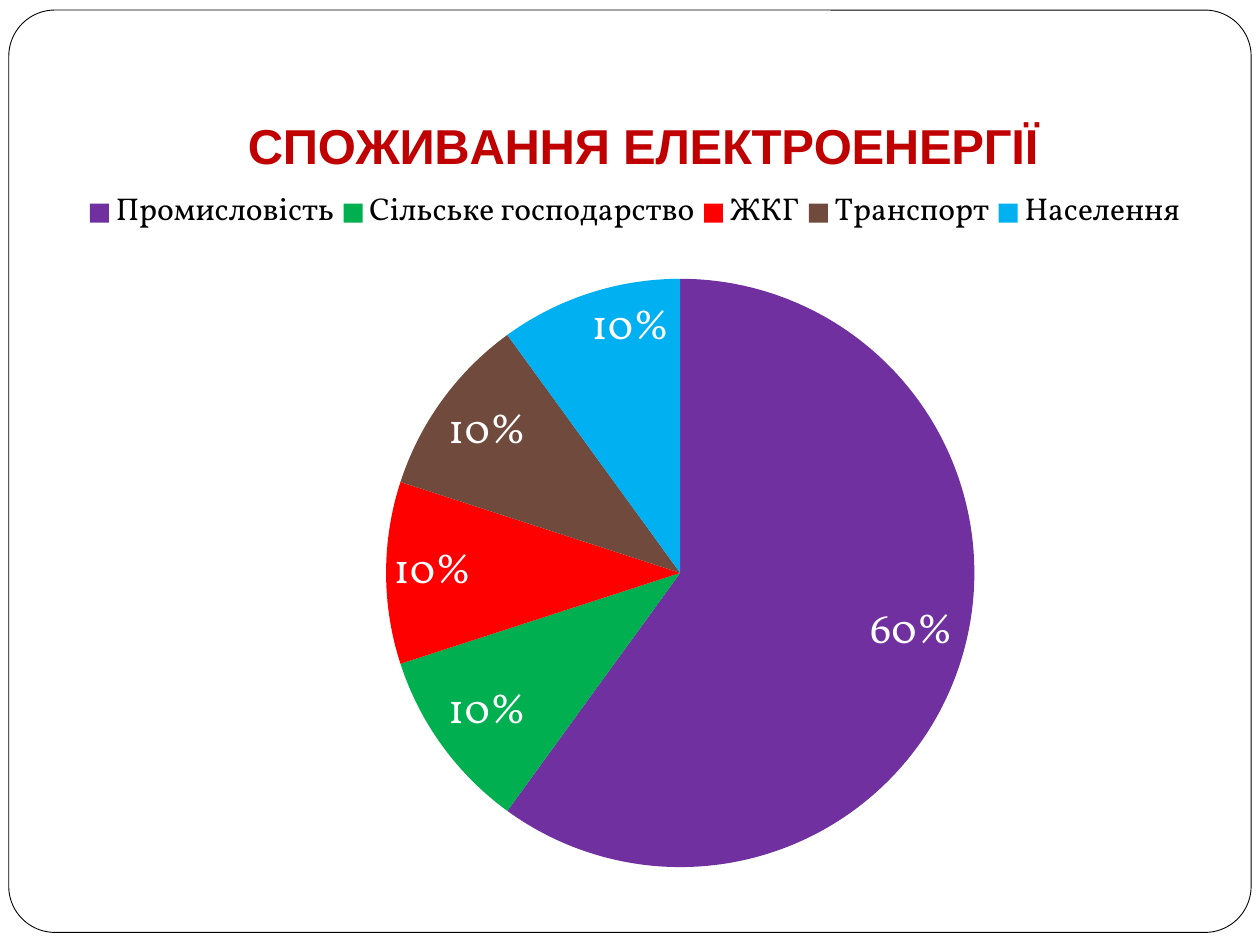
import lxml.etree
import pptx
import pptx.chart.data
import pptx.dml.color
import pptx.enum.chart
import pptx.enum.shapes
import pptx.oxml.ns
import pptx.util

Inches = pptx.util.Inches
Pt = pptx.util.Pt
rgb = pptx.dml.color.RGBColor.from_string
qn = pptx.oxml.ns.qn

THEME = {
    "paper": "FFFFFF",
    "edge": "000000",
    "title": {"name": "Arial", "size": Pt(28), "bold": True, "color": "C00000"},
    "text": {"name": "Vollkorn", "size": Pt(18), "bold": False, "color": "000000"},
    "label": {"name": "Vollkorn", "size": Pt(24), "bold": False, "color": "FFFFFF"},
}
SHARES = [
    ("Промисловість", 60, "7030A0"),
    ("Сільське господарство", 10, "00B050"),
    ("ЖКГ", 10, "FF0000"),
    ("Транспорт", 10, "704A3D"),
    ("Населення", 10, "00B0F0"),
]


def style(font, look):
    for key, value in look.items():
        if key == "color":
            font.color.rgb = rgb(value)
        else:
            setattr(font, key, value)


def place(node, index, **spots):
    """Give a chart part a manual layout, in fractions of the chart."""
    for old in node.findall(qn("c:layout")):
        node.remove(old)
    layout = lxml.etree.Element(qn("c:layout"))
    node.insert(index, layout)
    manual = lxml.etree.SubElement(layout, qn("c:manualLayout"))
    for tag, value in spots.items():
        lxml.etree.SubElement(manual, qn("c:" + tag)).set("val", str(value))


deck = pptx.Presentation()
deck.slide_width, deck.slide_height = Inches(10), Inches(7.5)
slide = deck.slides.add_slide(deck.slide_layouts[6])

frame = slide.shapes.add_shape(
    pptx.enum.shapes.MSO_SHAPE.ROUNDED_RECTANGLE,
    Inches(0.07), Inches(0.08), Inches(9.86), Inches(7.32))
frame.adjustments[0] = 0.05
frame.shadow.inherit = False
frame.fill.solid()
frame.fill.fore_color.rgb = rgb(THEME["paper"])
frame.line.color.rgb = rgb(THEME["edge"])
frame.line.width = Pt(0.5)

data = pptx.chart.data.CategoryChartData()
data.categories = [name for name, share, color in SHARES]
data.add_series("Series 1", [share for name, share, color in SHARES])
chart = slide.shapes.add_chart(
    pptx.enum.chart.XL_CHART_TYPE.PIE,
    Inches(0.55), Inches(0.23), Inches(8.98), Inches(6.8), data).chart
style(chart.font, THEME["text"])

chart.has_title = True
title = chart.chart_title
title.include_in_layout = False
line = title.text_frame.paragraphs[0]
run = line.add_run()
run.text = "СПОЖИВАННЯ ЕЛЕКТРОЕНЕРГІЇ"
style(run.font, THEME["title"])

chart.has_legend = True
legend = chart.legend
legend.position = pptx.enum.chart.XL_LEGEND_POSITION.TOP
legend.include_in_layout = False
style(legend.font, THEME["text"])

plot = chart.plots[0]
plot.vary_by_categories = True
for spot, (name, share, color) in enumerate(SHARES):
    fill = plot.series[0].points[spot].format.fill
    fill.solid()
    fill.fore_color.rgb = rgb(color)

plot.has_data_labels = True
labels = plot.data_labels
style(labels.font, THEME["label"])
labels.show_percentage = True
labels.show_value = False
labels.number_format = "0%"
labels.number_format_is_linked = False
labels.position = pptx.enum.chart.XL_LABEL_POSITION.INSIDE_END

edge = {"xMode": "edge", "yMode": "edge"}
place(title._element, 1, **edge, x=0.15, y=0.09)
place(legend._element, 1, **edge, x=0.01, y=0.18, w=0.98, h=0.07)
place(chart._chartSpace.chart.plotArea, 0, layoutTarget="inner",
      **edge, x=0.28, y=0.29, w=0.52, h=0.69)

deck.save("out.pptx")
